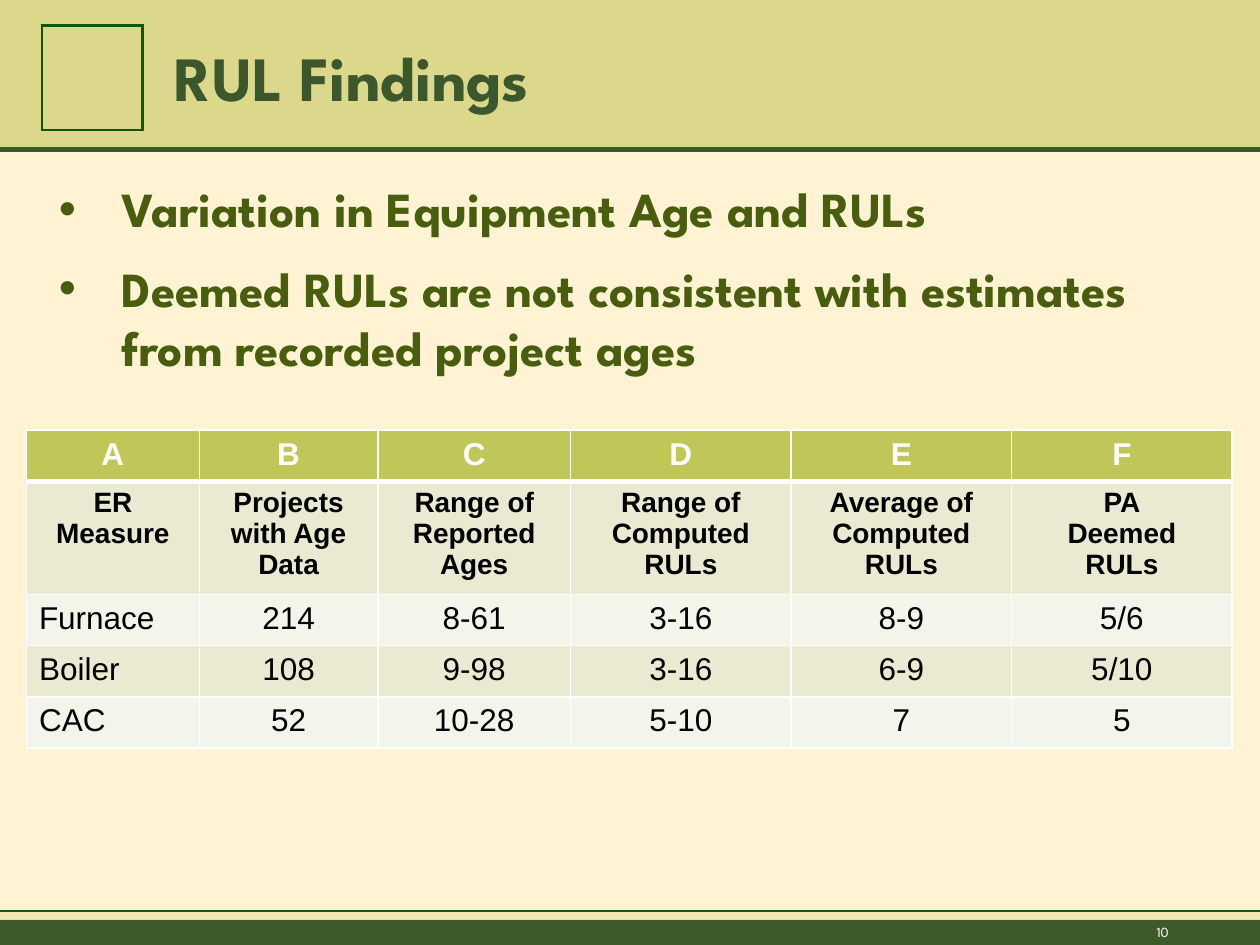
from dataclasses import dataclass
from typing import Any

from lxml.etree import SubElement
from pptx import Presentation
from pptx.dml.color import RGBColor
from pptx.enum.shapes import MSO_CONNECTOR, MSO_SHAPE
from pptx.enum.text import MSO_ANCHOR, PP_ALIGN
from pptx.oxml.ns import qn
from pptx.util import Pt

WIDTH, HEIGHT = 720, 540


def color(hex_code):
    return RGBColor.from_string(hex_code)


@dataclass
class FindingsSlide:
    slide: Any
    heading_font: str = "League Spartan"
    table_font: str = "Arial"
    dark: str = "3F5A29"
    accent: str = "C1C659"
    frame: str = "0F560E"
    white: str = "FFFFFF"

    def background(self, hex_code):
        fill = self.slide.background.fill
        fill.solid()
        fill.fore_color.rgb = color(hex_code)

    def band(self, top, height, hex_code, opacity=100):
        band = self.slide.shapes.add_shape(
            MSO_SHAPE.RECTANGLE, 0, Pt(top), Pt(WIDTH), Pt(height))
        band.shadow.inherit = False
        band.line.fill.background()
        band.fill.solid()
        band.fill.fore_color.rgb = color(hex_code)
        if opacity < 100:
            tint = band._element.spPr.find(".//" + qn("a:srgbClr"))
            SubElement(tint, qn("a:alpha"), val=str(opacity * 1000))

    def rule(self, top, hex_code, weight):
        rule = self.slide.shapes.add_connector(
            MSO_CONNECTOR.STRAIGHT, 0, Pt(top), Pt(WIDTH), Pt(top))
        rule.line.color.rgb = color(hex_code)
        rule.line.width = Pt(weight)
        SubElement(rule._element.spPr, qn("a:effectLst"))

    def add_words(self, paragraph, words, font, size, hex_code, bold):
        for number, line in enumerate(words.split("\n")):
            if number:
                paragraph.add_line_break()
            run = paragraph.add_run()
            run.text = line
            run.font.name = font
            run.font.size = Pt(size)
            run.font.bold = bold
            run.font.color.rgb = color(hex_code)

    def text(self, box, lines, size, hex_code, bold=True, bullets=False,
             anchor=MSO_ANCHOR.TOP):
        frame = self.slide.shapes.add_textbox(*map(Pt, box)).text_frame
        frame.word_wrap = True
        frame.vertical_anchor = anchor
        for number, line in enumerate(lines):
            paragraph = frame.add_paragraph() if number else frame.paragraphs[0]
            if bullets:
                properties = paragraph._p.get_or_add_pPr()
                properties.set("marL", str(Pt(36)))
                properties.set("indent", str(-Pt(36)))
                SubElement(properties, qn("a:buFont"), typeface=self.table_font)
                SubElement(properties, qn("a:buChar"), char="•")
                paragraph.space_after = Pt(6)
                if number:
                    paragraph.space_before = Pt(6)
            self.add_words(paragraph, line, self.heading_font, size, hex_code, bold)

    def table(self, left, top, widths, heights):
        table = self.slide.shapes.add_table(
            len(heights), len(widths), Pt(left), Pt(top),
            Pt(sum(widths)), Pt(sum(heights))).table
        table.first_row = table.horz_banding = False
        for column, width in zip(table.columns, widths):
            column.width = Pt(width)
        for row, height in zip(table.rows, heights):
            row.height = Pt(height)
        return table

    def cell(self, cell, hex_code, borders, fill=None):
        properties = cell._tc.get_or_add_tcPr()
        for side, weight in zip("LRTB", borders):
            line = SubElement(properties, qn("a:ln" + side), w=str(Pt(weight)))
            SubElement(SubElement(line, qn("a:solidFill")),
                       qn("a:srgbClr"), val=hex_code)
        if fill:
            cell.fill.solid()
            cell.fill.fore_color.rgb = color(fill)
        else:
            cell.fill.background()

    def findings(self, left, top, widths, heights, rows):
        table = self.table(left, top, widths, heights)
        for r, row in enumerate(rows):
            fill = self.accent if r == 0 else ("F4F5EA", "E9EAD1")[r % 2]
            borders = (1, 1, 3 if r == 1 else 1, 3 if r == 0 else 1)
            for c, value in enumerate(row):
                cell = table.cell(r, c)
                self.cell(cell, self.white, borders, fill)
                paragraph = cell.text_frame.paragraphs[0]
                is_measure = r > 1 and c == 0
                paragraph.alignment = PP_ALIGN.LEFT if is_measure else PP_ALIGN.CENTER
                self.add_words(paragraph, value, self.table_font,
                               16 if r == 1 else 18,
                               self.white if r == 0 else "000000", r < 2)


def main():
    deck = Presentation()
    deck.slide_width, deck.slide_height = Pt(WIDTH), Pt(HEIGHT)
    page = FindingsSlide(deck.slides.add_slide(deck.slide_layouts[6]))

    # Header and footer bands
    page.background("FFF3D3")
    page.band(0, 85, page.accent, 58)
    page.band(525.6, 14.4, page.dark)
    page.band(520.6, 5, "CCCF6B", 33)
    page.rule(520.6, page.frame, 0.75)
    page.rule(85.5, page.dark, 3)

    # Framed square beside the title
    square = page.table(23.8, 14.6, [57.6], [59.8])
    page.cell(square.cell(0, 0), page.frame, [1.5] * 4)

    # Title
    page.text((92.9, 18, 589, 51), ["RUL Findings"], 36, "3D572D",
              anchor=MSO_ANCHOR.MIDDLE)

    # Remaining useful life by measure
    page.findings(
        15.1, 245.8, [98.8, 102, 110.2, 126, 126, 126],
        [29.2, 60.5, 29.2, 29.2, 29.2],
        [list("ABCDEF"),
         ["ER Measure", "Projects with Age Data", "Range of Reported Ages",
          "Range of Computed RULs", "Average of Computed RULs",
          "PA\nDeemed\nRULs"],
         ["Furnace", "214", "8-61", "3-16", "8-9", "5/6"],
         ["Boiler", "108", "9-98", "3-16", "6-9", "5/10"],
         ["CAC", "52", "10-28", "5-10", "7", "5"]])

    # Key points
    page.text((26.6, 98.6, 648.7, 47.5),
              ["Variation in Equipment Age and RULs",
               "Deemed RULs are not consistent with estimates "
               "from recorded project ages"],
              28, "485D0E", bullets=True)

    # Page number
    page.text((653.8, 524.2, 64, 16.6), ["10"], 8, page.white, bold=False)

    deck.save("out.pptx")


if __name__ == "__main__":
    main()
